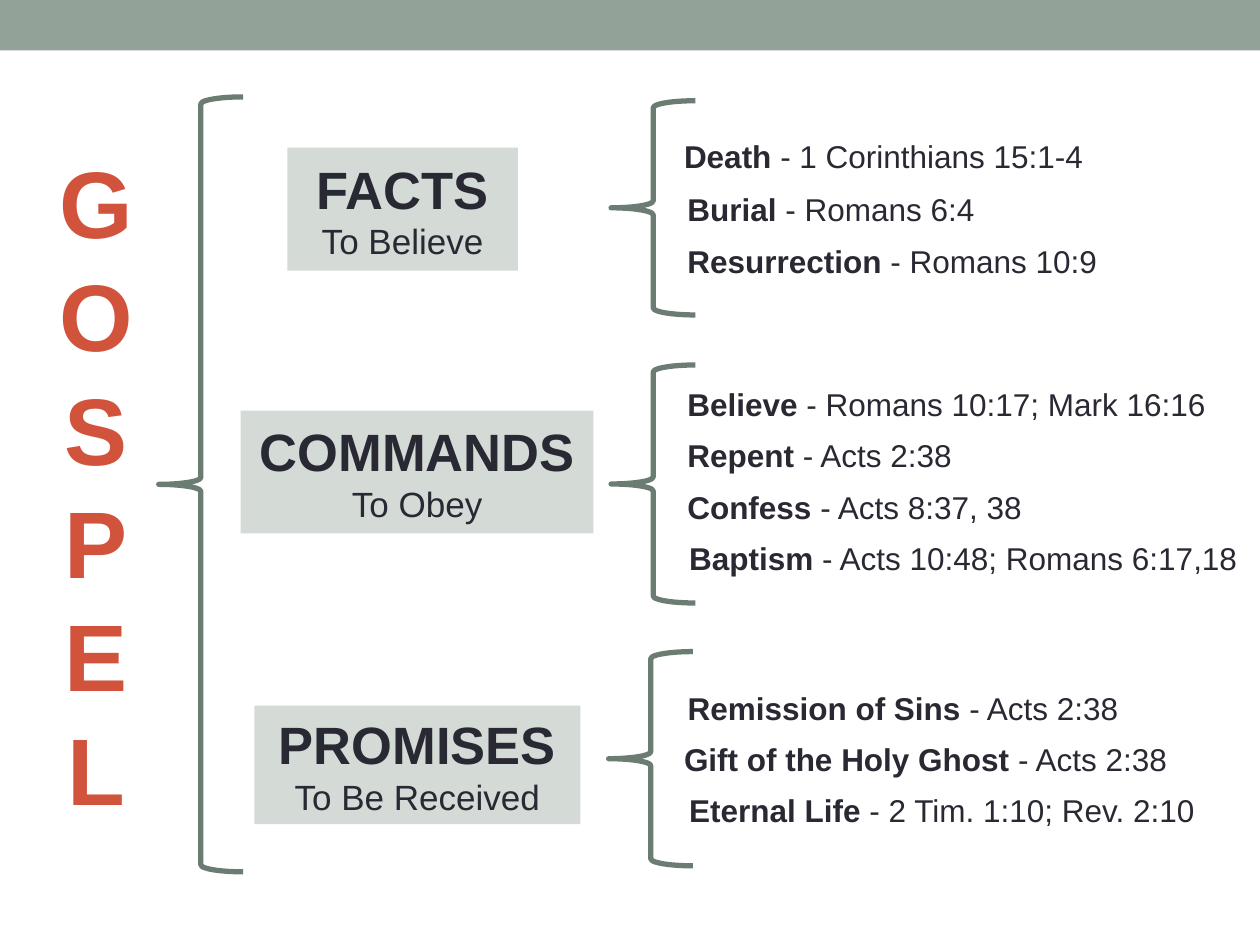
import pptx
import pptx.util
import pptx.dml.color
import pptx.enum.shapes
import pptx.enum.text
import pptx.oxml.ns
import lxml.etree
from dataclasses import dataclass
from typing import Any, NamedTuple

Pt = pptx.util.Pt
Kind = pptx.enum.shapes.MSO_SHAPE
Align = pptx.enum.text.PP_ALIGN
Anchor = pptx.enum.text.MSO_ANCHOR
Fit = pptx.enum.text.MSO_AUTO_SIZE


@dataclass(frozen=True)
class Theme:
    font: str = "Arial"
    ink: str = "292934"
    red: str = "D2533C"
    bar: str = "93A299"
    panel: str = "D4DAD6"
    brace: str = "6B7D72"
    edge: str = "8A9A91"
    word: float = 54
    head: float = 30
    sub: float = 20
    body: float = 18
    stroke: float = 3
    rim: float = 0.83


class Box(NamedTuple):
    left: float
    top: float
    width: float
    height: float


class Verse(NamedTuple):
    term: str
    source: str
    left: float
    width: float


@dataclass(frozen=True)
class Group:
    head: str
    sub: str
    panel: Box
    brace: Box
    top: float
    step: float
    verses: tuple[Verse, ...]


THEME = Theme()
LINE = 28.8
GROUPS = (
    Group("FACTS", "To Believe", Box(164.2, 84.4, 131.8, 70.2),
          Box(349.2, 57.6, 48.2, 122.4), 75, 29.9, (
              Verse("Death", " - 1 Corinthians 15:1-4", 383.8, 282),
              Verse("Burial", " - Romans 6:4", 385.7, 282),
              Verse("Resurrection", " - Romans 10:9", 385.7, 292))),
    Group("COMMANDS", "To Obey", Box(137.6, 234.6, 201.6, 70.2),
          Box(349.2, 208.6, 48.2, 136), 216.5, 29.3, (
              Verse("Believe", " - Romans 10:17; Mark 16:16", 385.7, 334),
              Verse("Repent", " - Acts 2:38", 385.7, 282),
              Verse("Confess", " - Acts 8:37, 38", 385.7, 282),
              Verse("Baptism", " - Acts 10:48; Romans 6:17,18", 386.8, 333))),
    Group("PROMISES", "To Be Received", Box(145.4, 403.3, 186.3, 67.7),
          Box(347.8, 372.4, 48.2, 122.4), 390.3, 29.2, (
              Verse("Remission of Sins", " - Acts 2:38", 385.9, 310),
              Verse("Gift of the Holy Ghost", " - Acts 2:38", 383.8, 310),
              Verse("Eternal Life", " - 2 Tim. 1:10; Rev. 2:10", 386.8, 310))),
)


def tint(code: str) -> Any:
    return pptx.dml.color.RGBColor.from_string(code)


def style(run: Any, size: float, bold: bool, color: str = THEME.ink) -> None:
    run.font.name = THEME.font
    run.font.size = Pt(size)
    run.font.bold = bold
    run.font.color.rgb = tint(color)


def block(slide: Any, box: Box, color: str) -> Any:
    shape = slide.shapes.add_shape(Kind.RECTANGLE, *map(Pt, box))
    shape.shadow.inherit = False
    shape.fill.solid()
    shape.fill.fore_color.rgb = tint(color)
    shape.line.fill.background()
    return shape


def brace(slide: Any, box: Box) -> None:
    shape = slide.shapes.add_shape(Kind.LEFT_BRACE, *map(Pt, box))
    shape.shadow.inherit = False
    shape.fill.background()
    shape.line.color.rgb = tint(THEME.brace)
    shape.line.width = Pt(THEME.stroke)


def label(slide: Any, group: Group) -> None:
    frame = block(slide, group.panel, THEME.panel).text_frame
    frame.word_wrap = True
    frame.auto_size = Fit.SHAPE_TO_FIT_TEXT
    frame.vertical_anchor = Anchor.MIDDLE
    frame.text = f"{group.head}\n{group.sub}"
    for line, size, bold in zip(frame.paragraphs, (THEME.head, THEME.sub), (True, False)):
        line.alignment = Align.CENTER
        style(line.runs[0], size, bold)


def note(slide: Any, box: Box) -> Any:
    frame = slide.shapes.add_textbox(*map(Pt, box)).text_frame
    frame.word_wrap = True
    frame.auto_size = Fit.SHAPE_TO_FIT_TEXT
    return frame


def verse(slide: Any, item: Verse, top: float) -> None:
    line = note(slide, Box(item.left, top, item.width, LINE)).paragraphs[0]
    for text, bold in ((item.term, True), (item.source, False)):
        run = line.add_run()
        run.text = text
        style(run, THEME.body, bold)


def tower(slide: Any, text: str, box: Box) -> None:
    qn = pptx.oxml.ns.qn
    frame = note(slide, box)
    frame.margin_left = frame.margin_right = 0
    frame.margin_top = frame.margin_bottom = 0
    frame.text = text
    line = frame.paragraphs[0]
    line.alignment = Align.CENTER
    run = line.runs[0]
    style(run, THEME.word, True, THEME.red)
    frame._txBody.find(qn("a:bodyPr")).set("vert", "wordArtVert")
    rim = lxml.etree.Element(qn("a:ln"), w=str(int(Pt(THEME.rim))))
    fill = lxml.etree.SubElement(rim, qn("a:solidFill"))
    lxml.etree.SubElement(fill, qn("a:srgbClr"), val=THEME.edge)
    run._r.get_or_add_rPr().insert(0, rim)


def main() -> None:
    deck = pptx.Presentation()
    deck.slide_width, deck.slide_height = Pt(720), Pt(540)
    slide = deck.slides.add_slide(deck.slide_layouts[6])
    block(slide, Box(0, 0, 720, 28.8), THEME.bar)
    tower(slide, "GOSPEL", Box(19.4, 45.4, 71.3, 462.2))
    brace(slide, Box(90.7, 55.4, 48.2, 442.8))
    for group in GROUPS:
        label(slide, group)
        brace(slide, group.brace)
        for index, item in enumerate(group.verses):
            verse(slide, item, group.top + index * group.step)
    deck.save("out.pptx")


if __name__ == "__main__":
    main()
